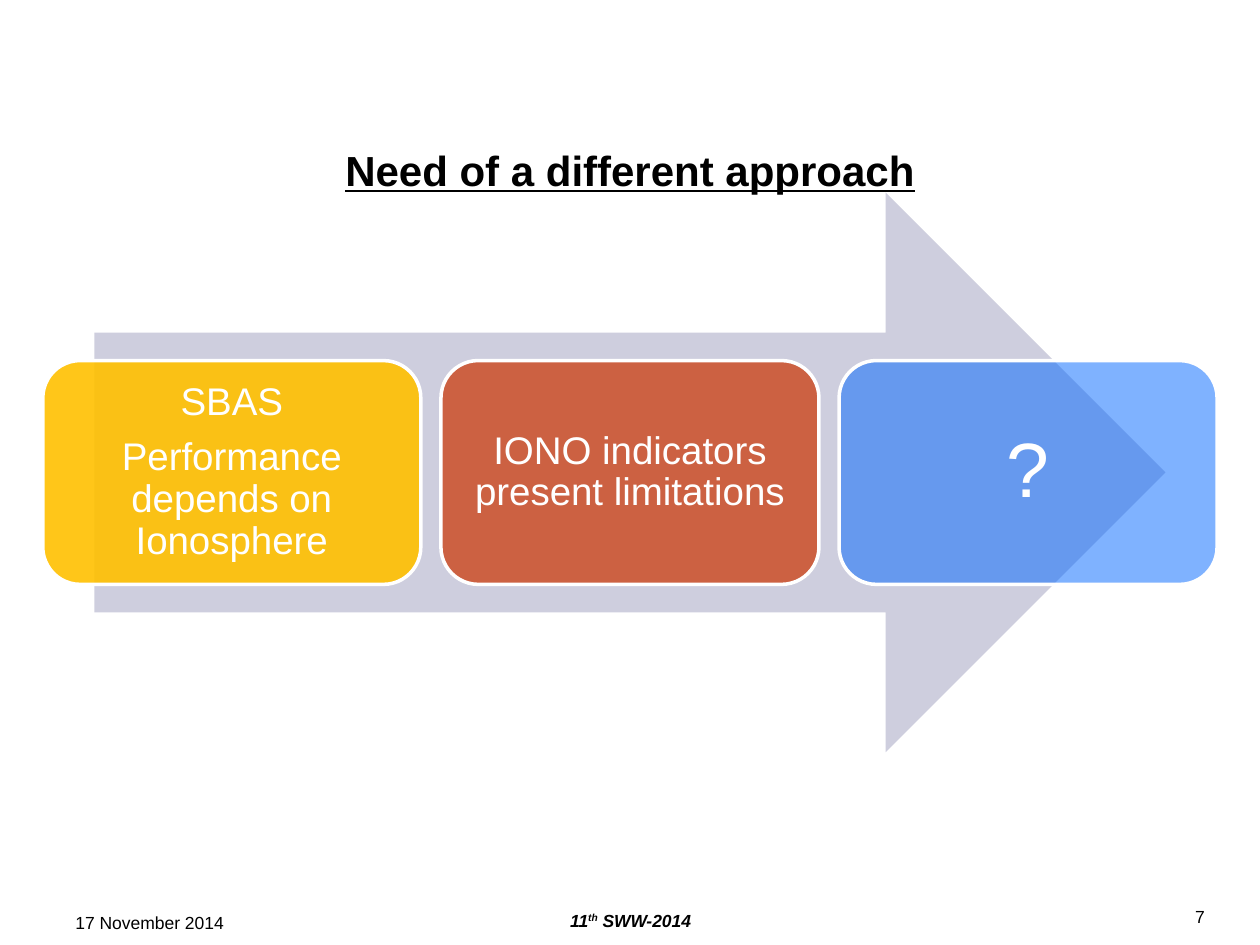
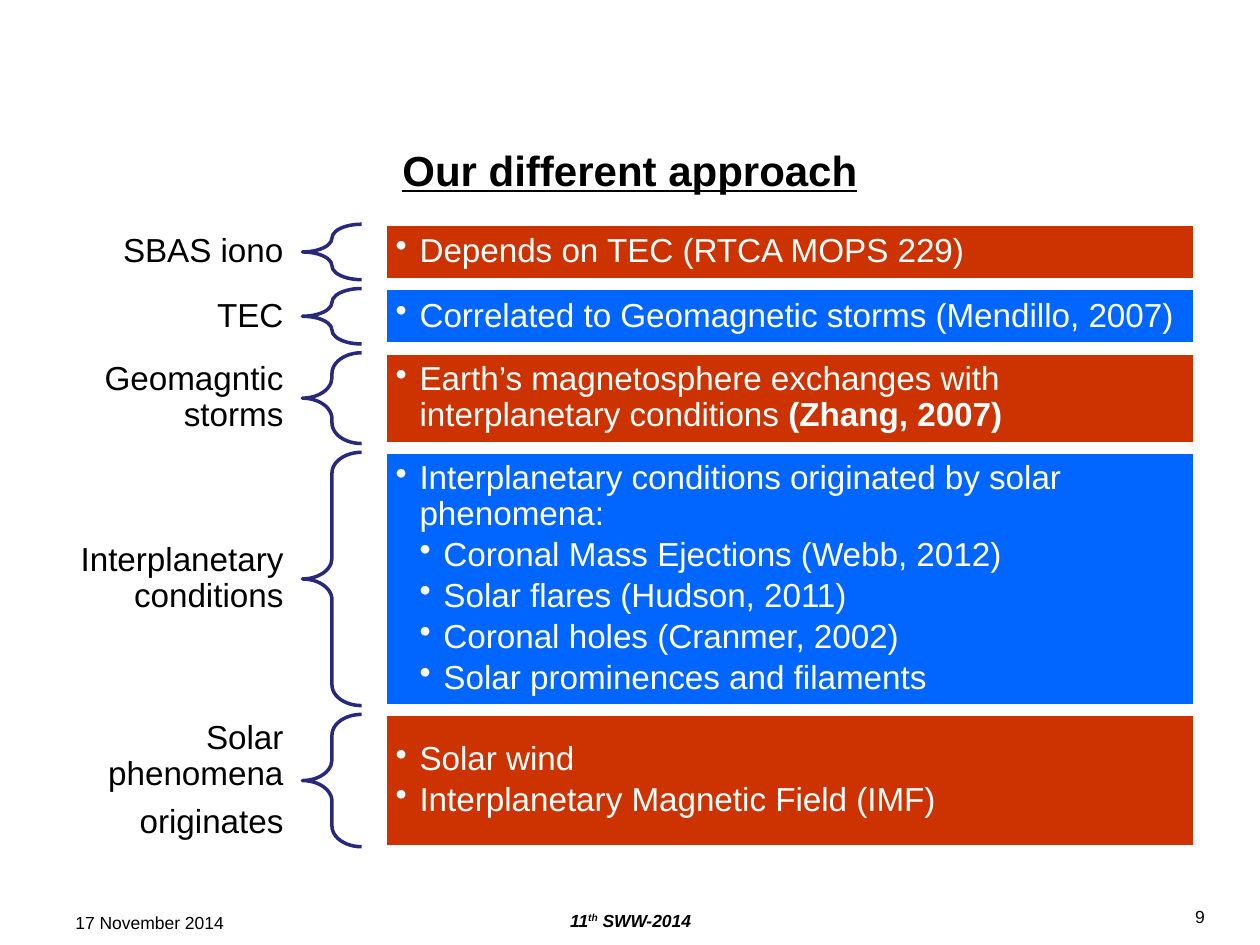
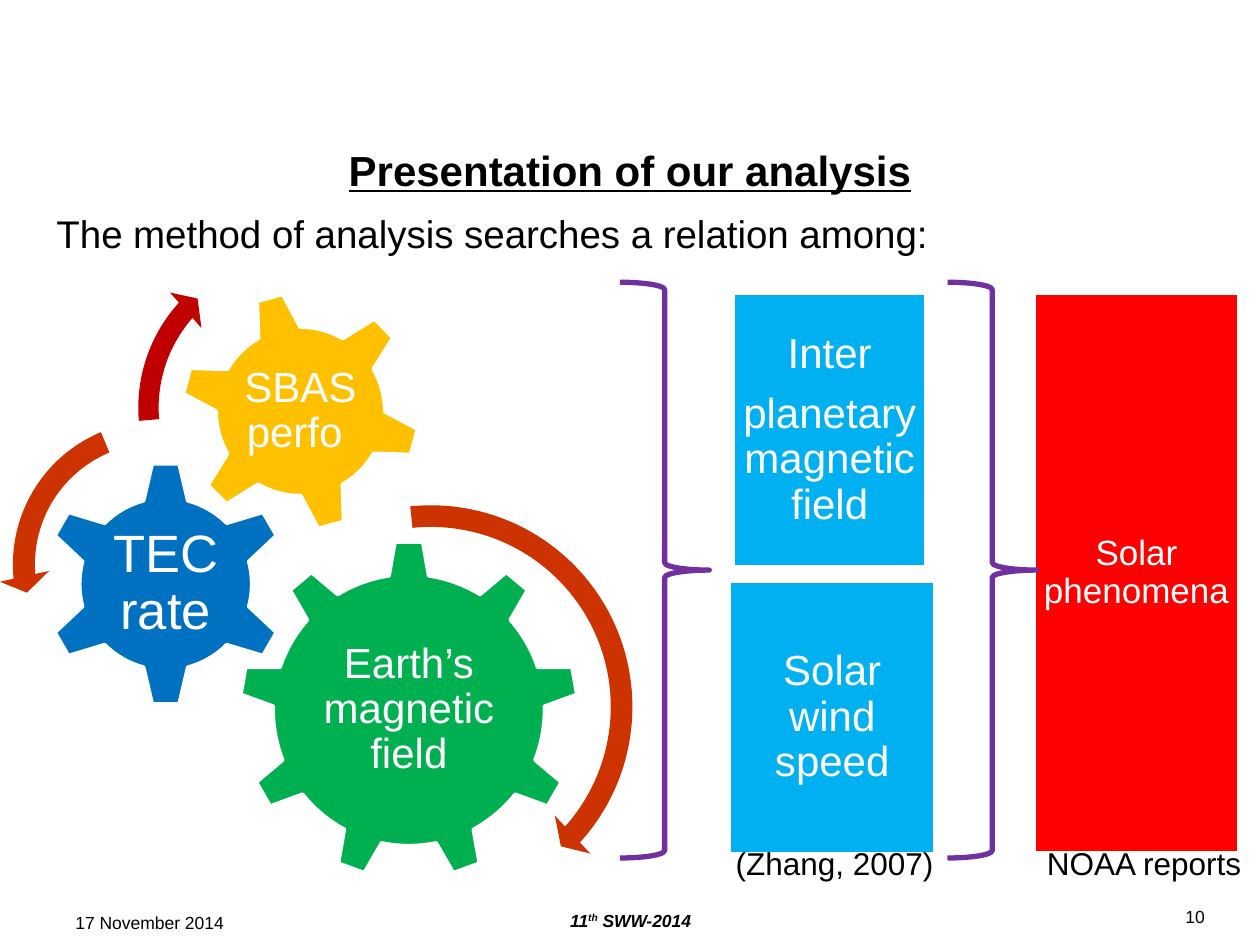
from dataclasses import dataclass
from typing import NamedTuple

from lxml import etree
from pptx import Presentation
from pptx.dml.color import RGBColor
from pptx.enum.shapes import MSO_SHAPE
from pptx.enum.text import MSO_ANCHOR, PP_ALIGN
from pptx.oxml.ns import qn
from pptx.util import Inches, Pt

RECTANGLE, ROUNDED = MSO_SHAPE.RECTANGLE, MSO_SHAPE.ROUNDED_RECTANGLE
LEFT_BRACE, RIGHT_BRACE = MSO_SHAPE.LEFT_BRACE, MSO_SHAPE.RIGHT_BRACE
RIGHT_ARROW = MSO_SHAPE.RIGHT_ARROW
GEAR_6, GEAR_9 = MSO_SHAPE.GEAR_6, MSO_SHAPE.GEAR_9
CLOCKWISE, COUNTERCLOCKWISE = MSO_SHAPE.CIRCULAR_ARROW, MSO_SHAPE.LEFT_CIRCULAR_ARROW
LEFT, CENTER, RIGHT, JUSTIFY = PP_ALIGN.LEFT, PP_ALIGN.CENTER, PP_ALIGN.RIGHT, PP_ALIGN.JUSTIFY
TOP, MIDDLE = MSO_ANCHOR.TOP, MSO_ANCHOR.MIDDLE


@dataclass(frozen=True)
class Theme:
    """Colours, font and type sizes shared by the deck."""

    font: str = "Arial"
    black: str = "000000"
    white: str = "FFFFFF"
    lavender: str = "CECEDE"
    navy: str = "29297B"
    gold: str = "FFC000"
    rust: str = "CC3300"
    blue: str = "0066FF"
    sky: str = "00B0F0"
    red: str = "FF0000"
    crimson: str = "C00000"
    green: str = "00B050"
    cobalt: str = "0070C0"
    purple: str = "7030A0"
    footer: int = 10
    caption: int = 18
    row: int = 19
    phenomena: int = 20
    body: int = 22
    title: int = 24
    large: int = 30
    huge: int = 44


THEME = Theme()


class Box(NamedTuple):
    """A region in inches."""

    left: float
    top: float
    width: float
    height: float

    def inner(self, left, top, width, height):
        """Return a box offset from this box's top left corner."""
        return Box(self.left + left, self.top + top, width, height)

    def centered(self, width, height):
        """Return a box of the given size centred in this one."""
        return self.inner((self.width - width) / 2, (self.height - height) / 2, width, height)

    def lengths(self):
        """Return the four lengths for python-pptx."""
        return [Inches(value) for value in self]


@dataclass(frozen=True)
class Line:
    """One paragraph with an outline level and a bold ending."""

    text: str
    level: int = 0
    strong: str = ""


def add_bullet(para, level):
    """Give a paragraph a hanging round bullet."""
    properties = para._p.get_or_add_pPr()
    properties.set("marL", str(Inches(0.19 * (level + 1))))
    properties.set("indent", str(Inches(-0.19)))
    etree.SubElement(properties, qn("a:buChar")).set("char", "•")


def write(shape, lines, size, color=THEME.white, align=CENTER, anchor=MIDDLE,
          pads=(0.1, 0.05), wrap=True, after=0.0, spacing=None, bullets=False):
    """Fill a shape with paragraphs and return its text frame."""
    frame = shape.text_frame
    frame.word_wrap = wrap
    frame.vertical_anchor = anchor
    frame.margin_left = frame.margin_right = Inches(pads[0])
    frame.margin_top = frame.margin_bottom = Inches(pads[1])
    for index, line in enumerate(lines):
        para = frame.add_paragraph() if index else frame.paragraphs[0]
        para.alignment = align
        if spacing:
            para.line_spacing = spacing
            para.space_after = Pt(round(size * after, 1))
        if bullets:
            add_bullet(para, line.level)
        para.font.name = THEME.font
        para.font.size = Pt(size)
        para.font.color.rgb = RGBColor.from_string(color)
        para.add_run().text = line.text
        if line.strong:
            span = para.add_run()
            span.text = line.strong
            span.font.bold = True
    return frame


def write_diagram(shape, lines, size, pad, **options):
    """Fill a diagram part with tightly set paragraphs."""
    settings = {"pads": (pad, pad), "after": 0.35, "spacing": 0.9} | options
    return write(shape, lines, size, **settings)


def add_text(page, box):
    """Add an empty text box."""
    return page.shapes.add_textbox(*box.lengths())


def add_panel(page, kind, box, fill, outlined=True, opacity=100):
    """Add a filled preset shape, optionally outlined in white."""
    panel = page.shapes.add_shape(kind, *box.lengths())
    panel.shadow.inherit = False
    panel.fill.solid()
    panel.fill.fore_color.rgb = RGBColor.from_string(fill)
    if opacity < 100:
        color = panel._element.spPr.find(qn("a:solidFill"))[0]
        etree.SubElement(color, qn("a:alpha")).set("val", str(opacity * 1000))
    if outlined:
        panel.line.color.rgb = RGBColor.from_string(THEME.white)
        panel.line.width = Pt(2)
    else:
        panel.line.fill.background()
    return panel


def add_brace(page, kind, box, color, width):
    """Add an unfilled brace."""
    brace = page.shapes.add_shape(kind, *box.lengths())
    brace.shadow.inherit = False
    brace.fill.background()
    brace.line.color.rgb = RGBColor.from_string(color)
    brace.line.width = Pt(width)
    return brace


def add_footer(page, box, number):
    """Place the date, the event name and the page number."""
    date = add_text(page, box.inner(0, 0.05, 1.9, 0.34))
    write(date, [Line("17 November 2014")], THEME.footer, THEME.black, LEFT, TOP)
    event = add_text(page, box.inner(2.92, 0.03, 3.17, 0.26))
    para = write(event, [Line("11")], THEME.footer, THEME.black, CENTER, TOP).paragraphs[0]
    para.font.bold = para.font.italic = True
    ordinal = para.add_run()
    ordinal.text = "th"
    ordinal._r.get_or_add_rPr().set("baseline", "30000")
    para.add_run().text = " SWW-2014"
    counter = add_text(page, box.inner(6.83, 0, 2.33, 0.52))
    write(counter, [Line(str(number))], THEME.footer, THEME.black, RIGHT, TOP)


def add_page(deck, title, number):
    """Add a blank page with the shared title and footer."""
    page = deck.slides.add_slide(deck.slide_layouts[6])
    heading = add_text(page, Box(0.5, 0.99, 9, 0.71))
    font = write(heading, [Line(title)], THEME.title, THEME.black).paragraphs[0].font
    font.bold = font.underline = True
    add_footer(page, Box(0.5, 7.14, 9.16, 0.52), number)
    return page


def add_flow(page, box):
    """Place three translucent cards over a wide arrow."""
    add_panel(page, RIGHT_ARROW, box.inner(0.41, 0, 8.5, box.height), THEME.lavender, outlined=False)
    cards = [
        (THEME.gold, 90, THEME.body, 0.09, ["SBAS", "Performance depends on Ionosphere"]),
        (THEME.rust, 70, THEME.body, 0.09, ["IONO indicators present limitations"]),
        (THEME.blue, 50, THEME.huge, 0.18, ["?"]),
    ]
    width, gap = 3, 0.16
    for index, (fill, opacity, size, pad, texts) in enumerate(cards):
        place = box.inner(index * (width + gap), box.height * 0.3, width, box.height * 0.4)
        card = add_panel(page, ROUNDED, place, fill, opacity=opacity)
        write_diagram(card, [Line(text) for text in texts], size, pad)


def add_brace_row(page, box, labels, label_height, fill, lines):
    """Place a label, a brace and a bulleted panel in one row."""
    label_top = (box.height - label_height) / 2
    label = add_text(page, box.inner(0, label_top, 2.36, label_height))
    write_diagram(label, [Line(text) for text in labels], THEME.row, 0.15,
                  color=THEME.black, align=RIGHT, pads=(0.15, 0.05))
    brace = add_brace(page, LEFT_BRACE, box.inner(2.36, 0, 0.47, box.height), THEME.navy, 2)
    brace.adjustments[0] = 0.35
    panel = add_panel(page, RECTANGLE, box.inner(3.02, 0, box.width - 3.02, box.height), fill)
    write_diagram(panel, lines, THEME.row, 0.08, align=LEFT, after=0.15, bullets=True)


def add_brace_list(page, box):
    """Stack the rows of the chain from SBAS to the Sun."""
    rows = [
        (0.44, 0.41, ["SBAS iono"], [Line("Depends on TEC (RTCA MOPS 229)")]),
        (0.44, 0.41, ["TEC"], [Line("Correlated to Geomagnetic storms (Mendillo, 2007)")]),
        (0.72, 0.66, ["Geomagntic storms"],
         [Line("Earth’s magnetosphere exchanges with interplanetary conditions ",
               strong="(Zhang, 2007)")]),
        (2.01, 0.66, ["Interplanetary conditions"],
         [Line("Interplanetary conditions originated by solar phenomena:"),
          Line("Coronal Mass Ejections (Webb, 2012)", 1),
          Line("Solar flares (Hudson, 2011)", 1),
          Line("Coronal holes (Cranmer, 2002)", 1),
          Line("Solar prominences and filaments", 1)]),
        (1.05, 1.05, ["Solar phenomena", "originates"],
         [Line("Solar wind"), Line("Interplanetary Magnetic Field (IMF)")]),
    ]
    top, gap = 0, 0.07
    for index, (height, label_height, labels, lines) in enumerate(rows):
        fill = (THEME.rust, THEME.blue)[index % 2]
        add_brace_row(page, box.inner(0, top, box.width, height), labels, label_height, fill, lines)
        top += height + gap


def add_gears(page, box):
    """Place the three meshed gears and their turning arrows."""
    gears = [
        (GEAR_9, 1.9, 2.4, 2.69, 0, THEME.green, "Earth’s magnetic field", THEME.title, 1.61, 1.38),
        (GEAR_6, 0.34, 1.77, 1.95, 0, THEME.cobalt, "TEC rate", THEME.large, 0.97, 0.96),
        (GEAR_6, 1.43, 0.42, 1.91, 345, THEME.gold, "SBAS perfo ", THEME.title, 1.07, 1.07),
    ]
    for kind, left, top, side, turn, fill, text, size, width, height in gears:
        place = box.inner(left, top, side, side)
        add_panel(page, kind, place, fill).rotation = turn
        label = add_text(page, place.centered(width, height))
        write_diagram(label, [Line(text)], size, 0.03)
    arrows = [
        (CLOCKWISE, 1.7, 2, 3.44, THEME.rust, (0.05, 2.99, 25.22, 158.48, 0.06)),
        (COUNTERCLOCKWISE, -0.01, 1.34, 2.5, THEME.rust, (0.07, 4.3, 104.89, 148.38, 0.08)),
        (CLOCKWISE, 0.99, 0, 2.69, THEME.crimson, (0.06, 3.94, 133.14, 105.08, 0.07)),
    ]
    for kind, left, top, side, fill, bends in arrows:
        arrow = add_panel(page, kind, box.inner(left, top, side, side), fill, outlined=False)
        for index, bend in enumerate(bends):
            arrow.adjustments[index] = bend


def add_drivers(page, box):
    """Place the interplanetary and solar panels with braces and sources."""
    panels = [
        (3.29, 0.09, 1.62, 4.44, THEME.red, THEME.phenomena, ["Solar phenomena"]),
        (0.9, 0.09, 1.53, 2.17, THEME.sky, THEME.title, ["Inter", "planetary magnetic field"]),
        (0.87, 2.37, 1.63, 2.17, THEME.sky, THEME.title, ["Solar wind speed"]),
    ]
    for left, top, width, height, fill, size, texts in panels:
        panel = add_panel(page, RECTANGLE, box.inner(left, top, width, height), fill)
        write_diagram(panel, [Line(text) for text in texts], size, 0.06)
    for left in (0, 2.6):
        add_brace(page, RIGHT_BRACE, box.inner(left, 0, 0.71, 4.57), THEME.purple, 3)
    for left, source in ((0.82, "(Zhang, 2007)"), (3.29, "NOAA reports")):
        caption = add_text(page, box.inner(left, 4.41, 1.85, 0.4))
        write(caption, [Line(source)], THEME.caption, THEME.black, LEFT, TOP, wrap=False)


def add_introduction(page, box):
    """Place the sentence that opens the analysis."""
    sentence = Line("The method of analysis searches a relation among:")
    write(add_text(page, box), [sentence], THEME.body, THEME.black, JUSTIFY, TOP)


def main():
    """Build and save the deck."""
    deck = Presentation()
    deck.slide_width, deck.slide_height = Inches(10), Inches(7.5)
    add_flow(add_page(deck, "Need of a different approach", 7), Box(0.34, 1.53, 9.32, 4.44))
    add_brace_list(add_page(deck, "Our different approach", 9), Box(0.04, 1.78, 9.44, 4.95))
    analysis = add_page(deck, "Presentation of our analysis", 10)
    add_introduction(analysis, Box(0.35, 1.62, 9.13, 0.92))
    add_gears(analysis, Box(0, 1.89, 5.14, 5.44))
    add_drivers(analysis, Box(4.92, 2.24, 5.12, 4.81))
    deck.save("out.pptx")


if __name__ == "__main__":
    main()
